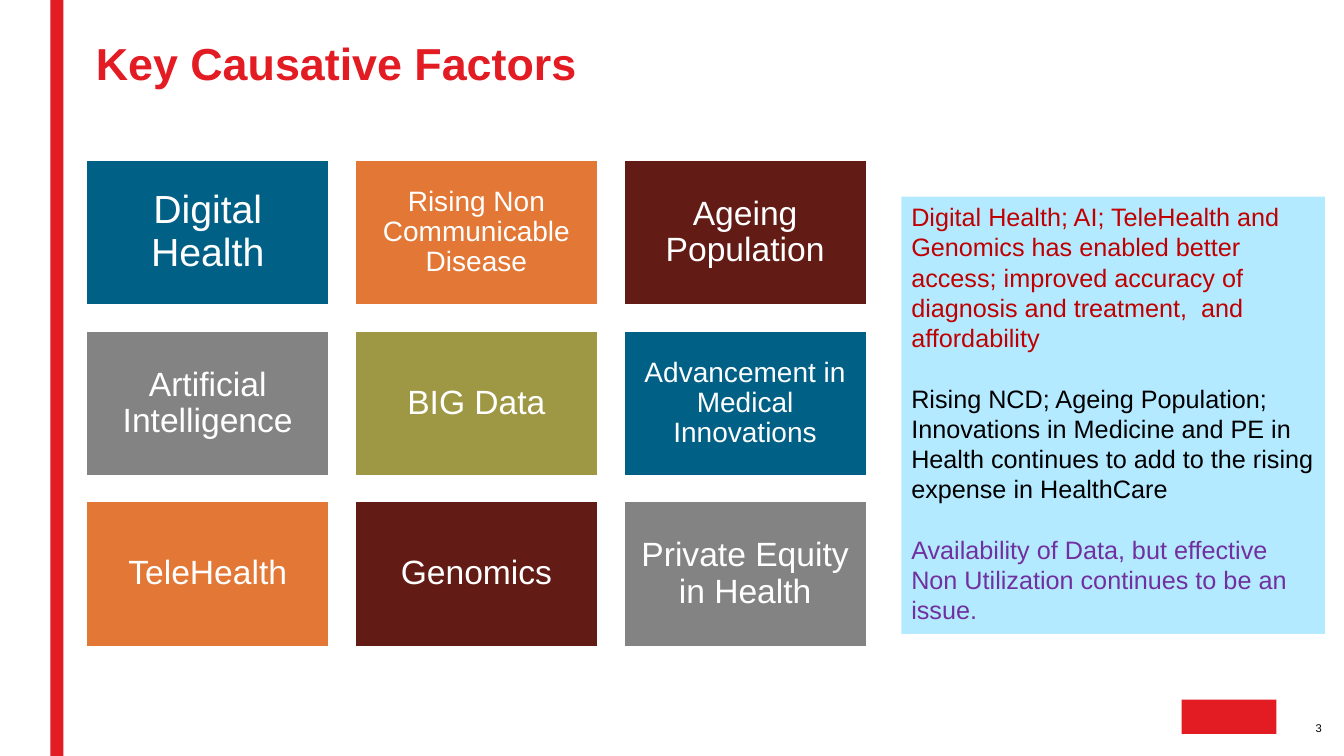
from dataclasses import dataclass

from pptx import Presentation
from pptx import util as u
from pptx.dml.color import RGBColor
from pptx.enum import shapes, text


@dataclass(frozen=True)
class Theme:
    font: str = "Arial"
    red: str = "E31B23"
    blue: str = "006086"
    orange: str = "E37735"
    maroon: str = "631C15"
    grey: str = "848383"
    olive: str = "9E9844"
    sky: str = "B4EAFF"
    crimson: str = "C00000"
    purple: str = "7030A0"
    black: str = "000000"
    white: str = "FFFFFF"
    title: int = 32
    large: int = 28
    medium: int = 24
    small: int = 20
    body: int = 18
    footer: int = 8


theme = Theme()


def add_block(page, left, top, width, height, fill):
    box = page.shapes.add_shape(
        shapes.MSO_SHAPE.RECTANGLE,
        u.Inches(left), u.Inches(top), u.Inches(width), u.Inches(height),
    )
    box.shadow.inherit = False
    box.fill.solid()
    box.fill.fore_color.rgb = RGBColor.from_string(fill)
    box.line.fill.background()
    return box


def style_paragraph(para, size, color, align, spacing=1.0, bold=False):
    para.alignment = align
    para.line_spacing = spacing
    for span in para.runs:
        span.font.name = theme.font
        span.font.size = u.Pt(size)
        span.font.bold = bold
        span.font.color.rgb = RGBColor.from_string(color)


deck = Presentation()
deck.slide_width = u.Inches(13.33)
deck.slide_height = u.Inches(7.5)
page = deck.slides.add_slide(deck.slide_layouts[5])

add_block(page, 0.5, 0, 0.13, 7.5, theme.red)
add_block(page, 11.72, 6.94, 0.94, 0.34, theme.red)

title = page.shapes.title
title.left, title.top = u.Inches(0.85), u.Inches(0.27)
title.width, title.height = u.Inches(11.69), u.Inches(0.68)
title.text_frame.text = "Key Causative Factors"
title.text_frame.auto_size = text.MSO_AUTO_SIZE.NONE
title.text_frame.vertical_anchor = text.MSO_ANCHOR.BOTTOM
style_paragraph(title.text_frame.paragraphs[0], theme.title, theme.red,
                text.PP_ALIGN.LEFT, 0.9, True)

factors = [
    ("Digital Health", theme.blue, theme.large),
    ("Rising Non Communicable Disease", theme.orange, theme.small),
    ("Ageing Population", theme.maroon, theme.medium),
    ("Artificial Intelligence", theme.grey, theme.medium),
    ("BIG Data", theme.olive, theme.medium),
    ("Advancement in Medical Innovations", theme.blue, theme.small),
    ("TeleHealth", theme.orange, theme.medium),
    ("Genomics", theme.maroon, theme.medium),
    ("Private Equity in Health", theme.grey, theme.medium),
]
columns = 3
grid_left, grid_top = 0.85, 1.58
tile_width, tile_height = 2.42, 1.45
column_step, row_step = 2.665, 1.695

for index, (label, fill, size) in enumerate(factors):
    row, column = divmod(index, columns)
    tile = add_block(page, grid_left + column * column_step,
                     grid_top + row * row_step, tile_width, tile_height, fill)
    tile.line.color.rgb = RGBColor.from_string(theme.white)
    tile.line.width = u.Pt(2)
    frame = tile.text_frame
    frame.word_wrap = True
    frame.vertical_anchor = text.MSO_ANCHOR.MIDDLE
    inset = u.Inches(size / 240)
    frame.margin_left = frame.margin_right = inset
    frame.margin_top = frame.margin_bottom = inset
    frame.text = label
    style_paragraph(frame.paragraphs[0], size, theme.white,
                    text.PP_ALIGN.CENTER, 0.9)

remarks = [
    ("Digital Health; AI; TeleHealth and Genomics has enabled better access; "
     "improved accuracy of diagnosis and treatment,  and affordability",
     theme.crimson),
    ("Rising NCD; Ageing Population; Innovations in Medicine and PE in Health "
     "continues to add to the rising expense in HealthCare", theme.black),
    ("Availability of Data, but effective Non Utilization continues to be "
     "an issue.", theme.purple),
]
panel = add_block(page, 8.94, 1.95, 4.2, 4.34, theme.sky)
frame = panel.text_frame
frame.word_wrap = True
frame.vertical_anchor = text.MSO_ANCHOR.TOP
frame.text = "\n".join(remark for remark, color in remarks)
for para, (remark, color) in zip(frame.paragraphs, remarks):
    style_paragraph(para, theme.body, color, text.PP_ALIGN.LEFT)
for para in frame.paragraphs[1:]:
    para.space_before = u.Pt(21.6)

number = page.shapes.add_textbox(u.Inches(12.47), u.Inches(7.16),
                                 u.Inches(0.64), u.Inches(0.13))
frame = number.text_frame
frame.word_wrap = True
frame.margin_left = frame.margin_right = 0
frame.margin_top = frame.margin_bottom = 0
frame.vertical_anchor = text.MSO_ANCHOR.BOTTOM
frame.text = "3"
style_paragraph(frame.paragraphs[0], theme.footer, theme.black,
                text.PP_ALIGN.RIGHT, 0.9)

deck.save("out.pptx")
